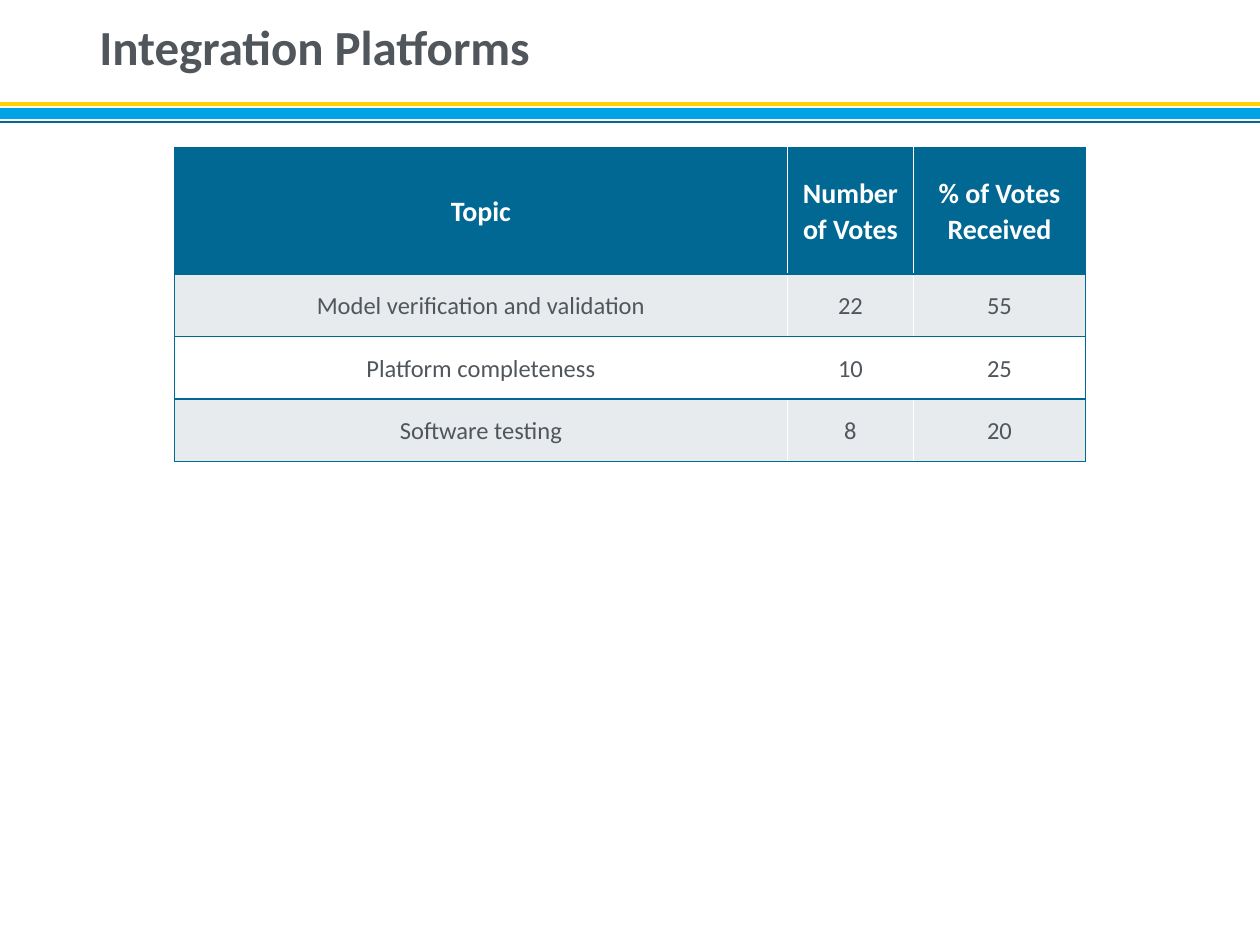
from dataclasses import dataclass

from lxml.etree import SubElement
from pptx import Presentation
from pptx.dml.color import RGBColor
from pptx.enum.shapes import MSO_CONNECTOR
from pptx.enum.text import MSO_ANCHOR, MSO_AUTO_SIZE, PP_ALIGN
from pptx.oxml.ns import qn
from pptx.util import Cm, Pt


@dataclass(frozen=True)
class Theme:
    font: str = "Calibri"
    text: str = "50565C"
    white: str = "FFFFFF"
    band: str = "E7EBEE"
    dark_blue: str = "006892"
    blue: str = "00A4E4"
    yellow: str = "FFD200"
    title_size: int = 28
    header_size: int = 16
    body_size: int = 14


class SlideBuilder:
    def __init__(self, prs, theme):
        self.theme = theme
        self.s = prs.slides.add_slide(prs.slide_layouts[5])

    def style(self, p, size, color, bold, align, spacing):
        p.alignment = align
        p.line_spacing = spacing
        p.font.name = self.theme.font
        p.font.size = Pt(size)
        p.font.bold = bold
        p.font.color.rgb = RGBColor.from_string(color)

    def rule(self, y, width, color, length):
        line = self.s.shapes.add_connector(MSO_CONNECTOR.STRAIGHT, 0, Cm(y), length, Cm(y))
        line.line.color.rgb = RGBColor.from_string(color)
        line.line.width = Pt(width)
        SubElement(line._element.spPr, qn("a:effectLst"))

    def title(self, text, left, top, width, height):
        sp = self.s.shapes.title
        sp.left, sp.top, sp.width, sp.height = Cm(left), Cm(top), Cm(width), Cm(height)
        tf = sp.text_frame
        tf.text = text
        tf.auto_size = MSO_AUTO_SIZE.NONE
        tf.vertical_anchor = MSO_ANCHOR.MIDDLE
        self.style(tf.paragraphs[0], self.theme.title_size, self.theme.text, True,
                   PP_ALIGN.LEFT, 0.9)

    def border(self, cell, sides):
        tcPr = cell._tc.get_or_add_tcPr()
        for side in sides:
            ln = SubElement(tcPr, qn(f"a:ln{side}"), w=str(Pt(1)))
            fill = SubElement(ln, qn("a:solidFill"))
            SubElement(fill, qn("a:srgbClr"), val=self.theme.dark_blue)

    def cell(self, cell, text, sides, fill, size, color, bold):
        cell.text = text
        cell.vertical_anchor = MSO_ANCHOR.MIDDLE
        cell.margin_left = cell.margin_right = Cm(0.28)
        cell.margin_top = cell.margin_bottom = 0
        self.border(cell, sides)
        cell.fill.solid()
        cell.fill.fore_color.rgb = RGBColor.from_string(fill)
        self.style(cell.text_frame.paragraphs[0], size, color, bold, PP_ALIGN.CENTER, 1.07)

    def table(self, rows, left, top, widths, heights):
        t = self.theme
        frame = self.s.shapes.add_table(len(rows), len(widths), Cm(left), Cm(top),
                                        Cm(sum(widths)), Cm(sum(heights)))
        table = frame.table
        for column, width in zip(table.columns, widths):
            column.width = Cm(width)
        for row, height in zip(table.rows, heights):
            row.height = Cm(height)
        for i, row in enumerate(rows):
            if i == 0:
                look = (t.dark_blue, t.header_size, t.white, True)
            else:
                look = (t.band if i % 2 else t.white, t.body_size, t.text, False)
            for j, text in enumerate(row):
                sides = ("L" if j == 0 else "") + ("R" if j == len(row) - 1 else "") + "TB"
                self.cell(table.cell(i, j), text, sides, *look)


def main():
    prs = Presentation()
    prs.slide_width, prs.slide_height = Cm(25.4), Cm(19.05)
    theme = Theme()
    slide = SlideBuilder(prs, theme)
    for y, width, color in ((2.29, 6, theme.blue), (2.46, 1.5, theme.dark_blue),
                            (2.1, 2.25, theme.yellow)):
        slide.rule(y, width, color, prs.slide_width)
    slide.title("Integration Platforms", 1.75, 0, 21.9, 2)
    votes = [
        ("Topic", "Number of Votes", "% of Votes Received"),
        ("Model verification and validation", "22", "55"),
        ("Platform completeness", "10", "25"),
        ("Software testing", "8", "20"),
    ]
    slide.table(votes, 3.52, 2.97, (12.35, 2.55, 3.46), (2.55, 1.26, 1.26, 1.26))
    prs.save("out.pptx")


if __name__ == "__main__":
    main()
